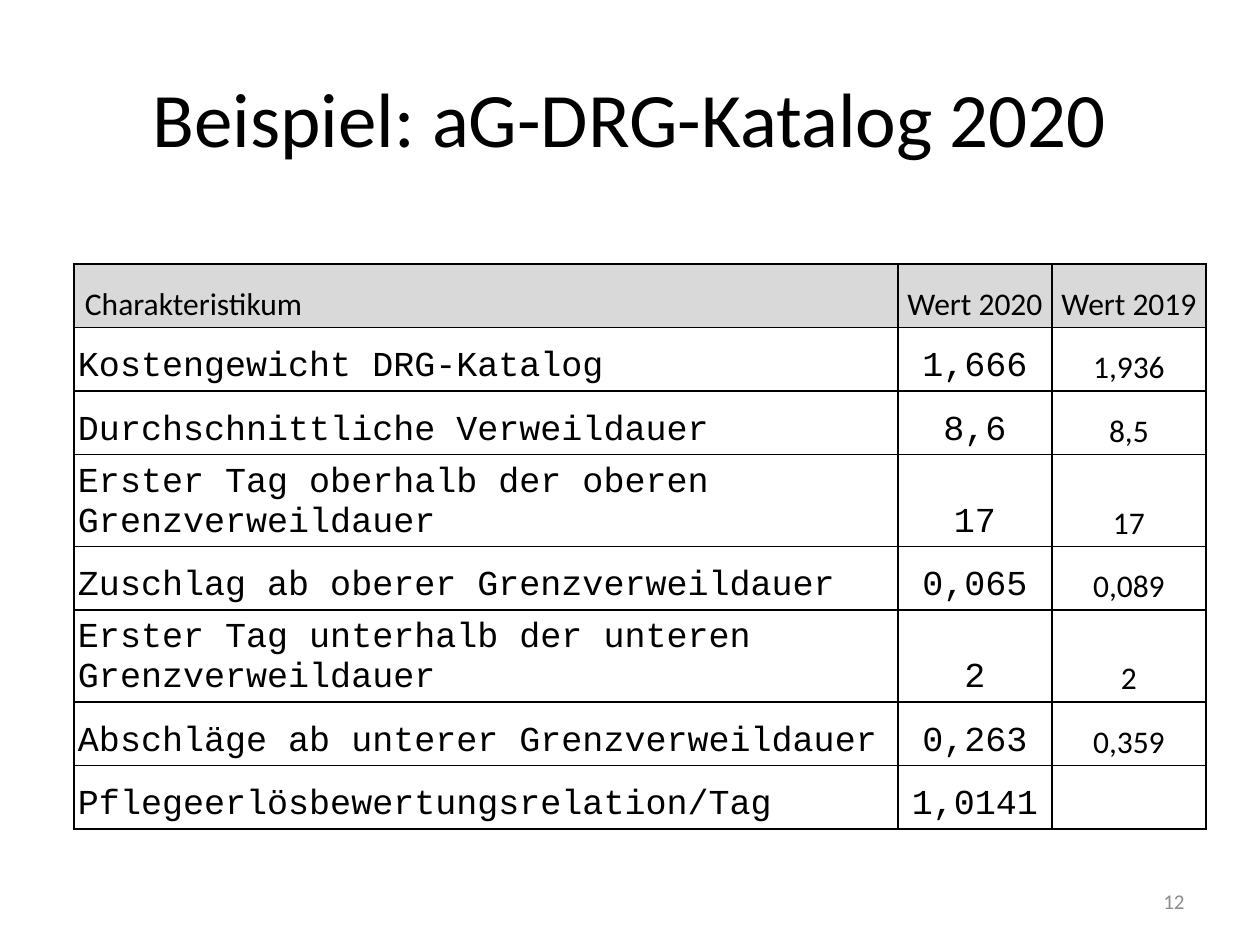
import pptx
import pptx.dml.color
import pptx.enum.text
import pptx.oxml
import pptx.oxml.ns
import pptx.util

EMU_PER_PX = 914400 // 126
ALIGN = pptx.enum.text.PP_ALIGN
ANCHOR = pptx.enum.text.MSO_ANCHOR

ROWS = [
    ("Charakteristikum", "Wert 2020", "Wert 2019"),
    ("Kostengewicht DRG-Katalog", "1,666", "1,936"),
    ("Durchschnittliche Verweildauer", "8,6", "8,5"),
    ("Erster Tag oberhalb der oberen Grenzverweildauer", "17", "17"),
    ("Zuschlag ab oberer Grenzverweildauer", "0,065", "0,089"),
    ("Erster Tag unterhalb der unteren Grenzverweildauer", "2", "2"),
    ("Abschläge ab unterer Grenzverweildauer", "0,263", "0,359"),
    ("Pflegeerlösbewertungsrelation/Tag", "1,0141", ""),
]


def px(length):
    return pptx.util.Emu(length * EMU_PER_PX)


def color(value):
    return pptx.dml.color.RGBColor.from_string(value)


class SlideBuilder:
    body_font = "Calibri"
    entry_font = "Courier New"
    ink = "000000"
    muted = "8C8C8C"
    header_fill = "D9D9D9"
    cell_margin = 4
    header_indent = 11

    def __init__(self, slide):
        self.slide = slide

    def format_para(self, para, size, font, ink, align):
        para.alignment = align
        for span in para.runs:
            span.font.size = pptx.util.Pt(size)
            span.font.name = font
            span.font.color.rgb = color(ink)

    def text(self, content, left, top, width, height, size, ink, align):
        box = self.slide.shapes.add_textbox(px(left), px(top), px(width), px(height))
        frame = box.text_frame
        frame.word_wrap = True
        frame.vertical_anchor = ANCHOR.MIDDLE
        frame.text = content
        self.format_para(frame.paragraphs[0], size, self.body_font, ink, align)

    def borders(self, cell):
        properties = cell._tc.get_or_add_tcPr()
        namespace = pptx.oxml.ns.nsdecls("a")
        for position, side in enumerate(("lnL", "lnR", "lnT", "lnB")):
            line = pptx.oxml.parse_xml(
                f'<a:{side} {namespace} w="12700"><a:solidFill>'
                f'<a:srgbClr val="{self.ink}"/></a:solidFill></a:{side}>'
            )
            properties.insert(position, line)

    def cell(self, cell, content, is_header, column):
        cell.margin_left = cell.margin_right = px(self.cell_margin)
        cell.margin_top = cell.margin_bottom = px(self.cell_margin)
        cell.vertical_anchor = ANCHOR.BOTTOM
        if is_header:
            cell.fill.solid()
            cell.fill.fore_color.rgb = color(self.header_fill)
            if column == 0:
                cell.margin_left = px(self.header_indent)
        else:
            cell.fill.background()
        cell.text = content
        para = cell.text_frame.paragraphs[0]
        para.space_before = pptx.util.Pt(2)
        para.space_after = pptx.util.Pt(4)
        is_entry = not is_header and column < 2
        size, font = (20, self.entry_font) if is_entry else (18, self.body_font)
        align = ALIGN.LEFT if column == 0 else ALIGN.CENTER
        self.format_para(para, size, font, self.ink, align)
        self.borders(cell)

    def table(self, rows, left, top, widths, height):
        frame = self.slide.shapes.add_table(
            len(rows), len(widths), px(left), px(top), px(sum(widths)), px(height)
        )
        table = frame.table
        table.first_row = False
        table.horz_banding = False
        for column, width in zip(table.columns, widths):
            column.width = px(width)
        for row_index, row in enumerate(rows):
            for column_index, content in enumerate(row):
                cell = table.cell(row_index, column_index)
                self.cell(cell, content, row_index == 0, column_index)


def main():
    deck = pptx.Presentation()
    deck.slide_width = pptx.util.Inches(10)
    deck.slide_height = pptx.util.Inches(7.5)
    page = SlideBuilder(deck.slides.add_slide(deck.slide_layouts[6]))
    page.text("Beispiel: aG-DRG-Katalog 2020", 63, 38, 1134, 158, 44, page.ink, ALIGN.CENTER)
    page.table(ROWS, 74, 264, (824, 154, 154), 508)
    page.text("12", 903, 876, 294, 50, 12, page.muted, ALIGN.RIGHT)
    deck.save("out.pptx")


if __name__ == "__main__":
    main()
